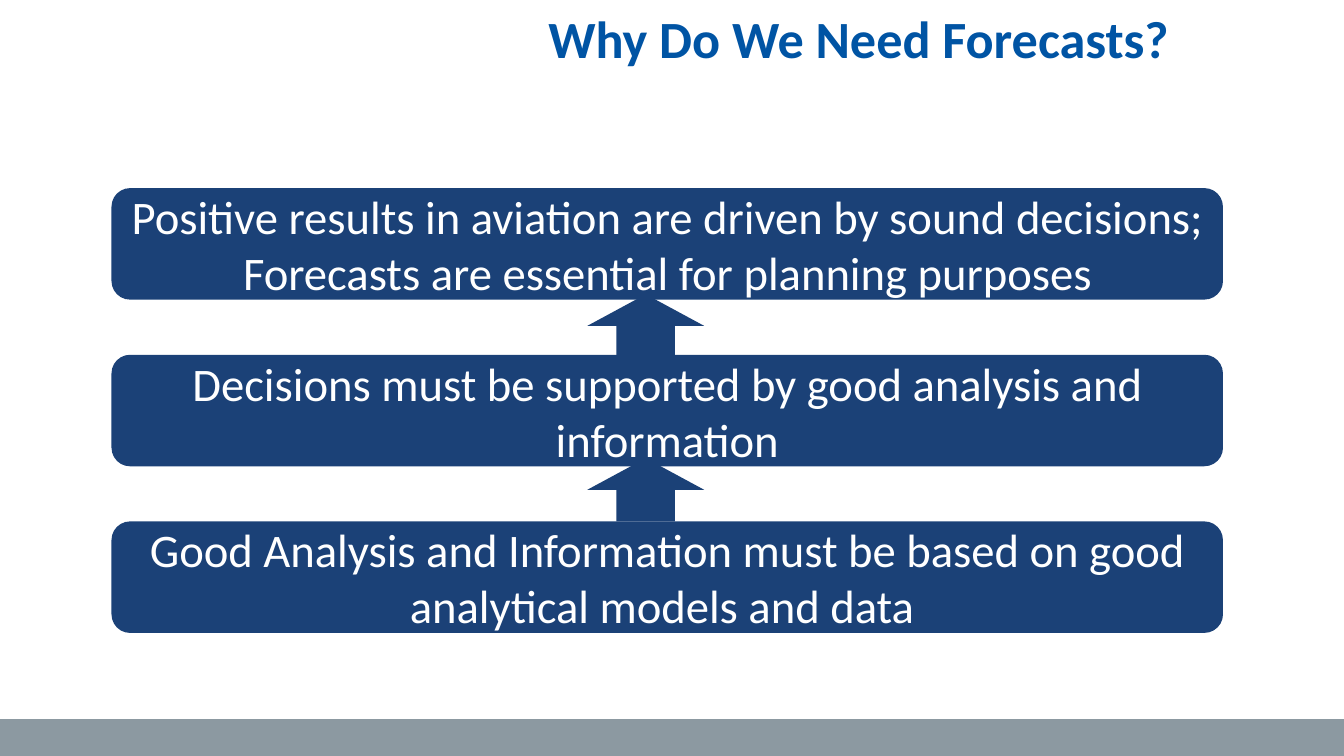
from pptx import Presentation
from pptx.dml.color import RGBColor
from pptx.enum.shapes import MSO_SHAPE
from pptx.enum.text import MSO_ANCHOR, PP_ALIGN
from pptx.util import Inches, Pt

RECTANGLE = MSO_SHAPE.RECTANGLE
ROUNDED = MSO_SHAPE.ROUNDED_RECTANGLE
UP_ARROW = MSO_SHAPE.UP_ARROW
TOP, MIDDLE = MSO_ANCHOR.TOP, MSO_ANCHOR.MIDDLE
LEFT, CENTER = PP_ALIGN.LEFT, PP_ALIGN.CENTER

NAVY, BLUE, GREY, WHITE = "1B4177", "0054A4", "8C99A1", "FFFFFF"
FONT = "Calibri"

SLIDE_WIDTH = 10
SLIDE_HEIGHT = SLIDE_WIDTH * 9 / 16
STATEMENTS = [
    "Positive results in aviation are driven by sound decisions; "
    "Forecasts are essential for planning purposes",
    "Decisions must be supported by good analysis and information",
    "Good Analysis and Information must be based on good "
    "analytical models and data ",
]
BOX_TOP, BOX_STEP = 1.4, 1.24
ARROW_TOPS = [2.19, 3.41]
FOOTER_TOP = 5.35


def color(value):
    return RGBColor.from_string(value)


def write(shape, text, size=25, fill=WHITE, bold=False, align=CENTER, anchor=MIDDLE):
    frame = shape.text_frame
    frame.word_wrap = True
    frame.vertical_anchor = anchor
    frame.margin_left = frame.margin_right = Inches(0.1)
    frame.margin_top = frame.margin_bottom = Inches(0.05)
    para = frame.paragraphs[0]
    para.alignment = align
    span = para.add_run()
    span.text = text
    span.font.name = FONT
    span.font.size = Pt(size)
    span.font.bold = bold
    span.font.color.rgb = color(fill)


class SlideBuilder:
    """Holds the current slide and the shared look of its elements."""

    def __init__(self, deck):
        self.slide = deck.slides.add_slide(deck.slide_layouts[5])
        background = self.slide.background.fill
        background.solid()
        background.fore_color.rgb = color(WHITE)

    def title(self, text, left, top, width, height):
        title = self.slide.shapes.title
        title.left, title.top = Inches(left), Inches(top)
        title.width, title.height = Inches(width), Inches(height)
        write(title, text, size=28, fill=BLUE, bold=True, align=LEFT, anchor=TOP)

    def shape(self, kind, left, top, width, height, fill=NAVY):
        shape = self.slide.shapes.add_shape(
            kind, Inches(left), Inches(top), Inches(width), Inches(height)
        )
        shape.shadow.inherit = False
        shape.fill.solid()
        shape.fill.fore_color.rgb = color(fill)
        shape.line.fill.background()
        return shape

    def statement(self, text, top):
        write(self.shape(ROUNDED, 0.83, top, 8.27, 0.83), text)

    def arrow(self, top):
        self.shape(UP_ARROW, 4.37, top, 0.87, 0.47)


def main():
    deck = Presentation()
    deck.slide_width, deck.slide_height = Inches(SLIDE_WIDTH), Inches(SLIDE_HEIGHT)

    builder = SlideBuilder(deck)
    builder.shape(
        RECTANGLE, 0, FOOTER_TOP, SLIDE_WIDTH, SLIDE_HEIGHT - FOOTER_TOP, fill=GREY
    )
    for row, text in enumerate(STATEMENTS):
        builder.statement(text, BOX_TOP + row * BOX_STEP)
    for top in ARROW_TOPS:
        builder.arrow(top)
    builder.title("Why Do We Need Forecasts?", 3.98, 0, 6.22, 0.84)

    deck.save("out.pptx")


if __name__ == "__main__":
    main()
